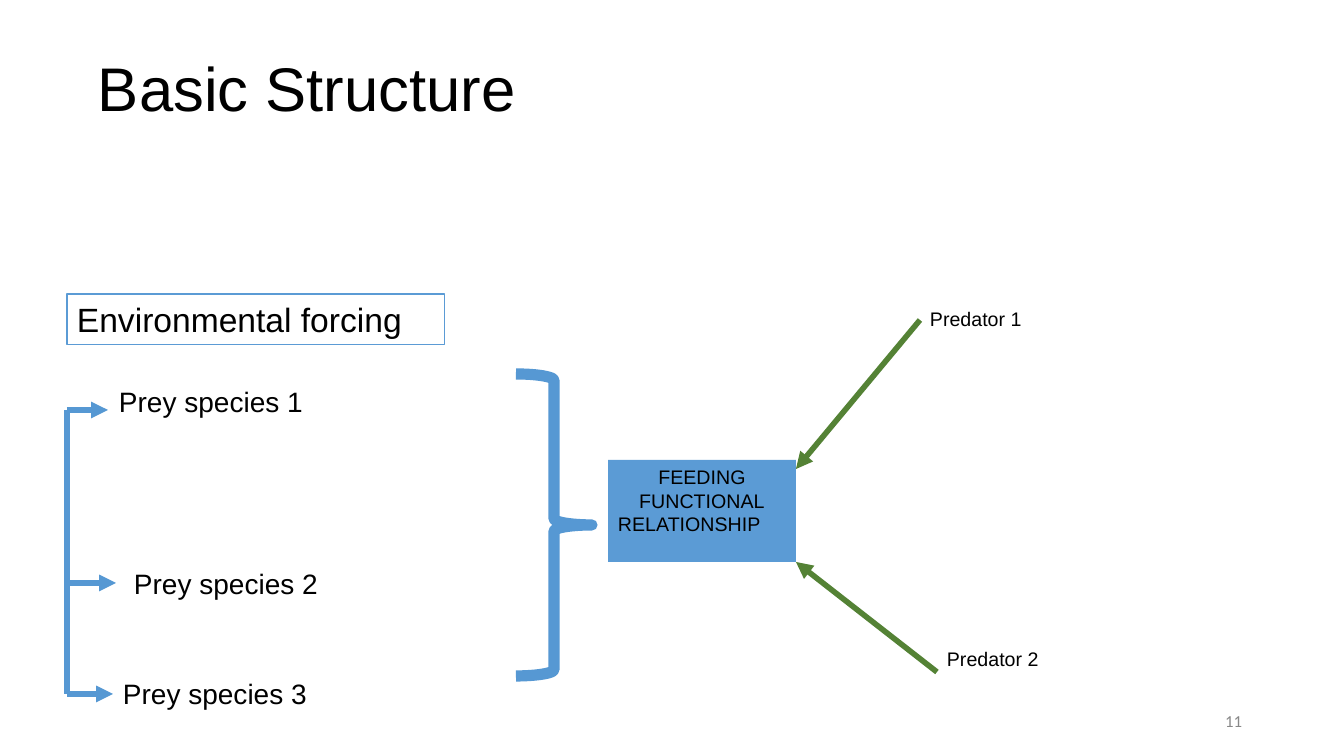
from pptx import Presentation
from pptx.dml.color import RGBColor
from pptx.enum.shapes import MSO_CONNECTOR, MSO_SHAPE
from pptx.enum.text import MSO_ANCHOR, PP_ALIGN
from pptx.oxml.ns import qn
from pptx.util import Pt
from lxml.etree import SubElement

PX = 12192000 / 1344  # EMU per px
SLIDE_SIZE = (1344, 756)
BLACK, GREY = "000000", "888888"
BOX_BLUE, LINE_BLUE, GREEN = "5B9BD5", "5698D3", "548235"


def px(*lengths):
    return [round(length * PX) for length in lengths]


def color(hex_text):
    return RGBColor.from_string(hex_text)


def set_line(line, hex_text, width):
    line.color.rgb = color(hex_text)
    line.width = Pt(width)


def write(shape, text, size, font="Arial", hex_text=BLACK, anchor=MSO_ANCHOR.TOP):
    frame = shape.text_frame
    frame.text = text
    frame.word_wrap = True
    frame.vertical_anchor = anchor
    for paragraph in frame.paragraphs:
        paragraph.alignment = PP_ALIGN.LEFT
        for run in paragraph.runs:
            run.font.size = Pt(size)
            run.font.name = font
            run.font.color.rgb = color(hex_text)
    return frame


def add_label(slide, box, text, size, **style):
    return write(slide.shapes.add_textbox(*px(*box)), text, size, **style)


def add_plain_shape(slide, kind, box):
    shape = slide.shapes.add_shape(kind, *px(*box))
    shape.shadow.inherit = False
    shape.fill.background()
    shape.line.fill.background()
    return shape


def add_line(slide, start, end, hex_text, arrow=True):
    connector = slide.shapes.add_connector(
        MSO_CONNECTOR.STRAIGHT, *px(*start, *end))
    set_line(connector.line, hex_text, 4)
    if arrow:
        SubElement(connector.line._get_or_add_ln(), qn("a:tailEnd"), type="triangle")
    SubElement(connector._element.spPr, qn("a:effectLst"))


def add_title(slide, text):
    title = slide.shapes.title
    title.left, title.top, title.width, title.height = px(93, 40, 1159, 146)
    frame = write(title, text, 44)
    frame.margin_left, frame.margin_top = px(5, 10)


def add_prey(slide):
    # Trunk with one branch per prey species
    trunk_x, branch_ys = 67, (410, 583, 694)
    add_line(slide, (trunk_x, branch_ys[0]), (trunk_x, branch_ys[-1]),
             LINE_BLUE, arrow=False)
    places = zip(branch_ys, (108, 116, 113), ((109, 380), (124, 562), (113, 672)))
    for number, (y, tip_x, corner) in enumerate(places, 1):
        add_line(slide, (trunk_x, y), (tip_x, y), LINE_BLUE)
        add_label(slide, (*corner, 213, 44), f"Prey species {number}", 20)


def add_feeding_box(slide):
    box = add_plain_shape(slide, MSO_SHAPE.RECTANGLE, (608, 460, 188, 102))
    box.fill.solid()
    box.fill.fore_color.rgb = color(BOX_BLUE)
    frame = write(box, "FEEDING\vFUNCTIONAL\nRELATIONSHIP", 14)
    frame.paragraphs[0].alignment = PP_ALIGN.CENTER


def add_predators(slide):
    predators = (((920, 302), (920, 320), (796, 469)),
                 ((937, 642), (937, 672), (796, 562)))
    for number, (corner, start, end) in enumerate(predators, 1):
        add_line(slide, start, end, GREEN)
        add_label(slide, (*corner, 148, 36), f"Predator {number}", 14)


def main():
    presentation = Presentation()
    presentation.slide_width, presentation.slide_height = px(*SLIDE_SIZE)
    slide = presentation.slides.add_slide(presentation.slide_layouts[5])
    add_title(slide, "Basic Structure")

    # Inputs on the left
    forcing = add_plain_shape(slide, MSO_SHAPE.RECTANGLE, (67, 294, 378, 51))
    set_line(forcing.line, BOX_BLUE, 0.75)
    write(forcing, "Environmental forcing", 24)
    add_prey(slide)

    # Brace leading to the feeding relationship
    brace = add_plain_shape(slide, MSO_SHAPE.RIGHT_BRACE, (516, 374, 76, 302))
    set_line(brace.line, LINE_BLUE, 8)
    add_feeding_box(slide)
    add_predators(slide)

    # Slide number
    number = add_label(slide, (950, 701, 302, 40), "11", 12, font="Calibri",
                       hex_text=GREY, anchor=MSO_ANCHOR.MIDDLE)
    number.paragraphs[0].alignment = PP_ALIGN.RIGHT
    presentation.save("out.pptx")


if __name__ == "__main__":
    main()
